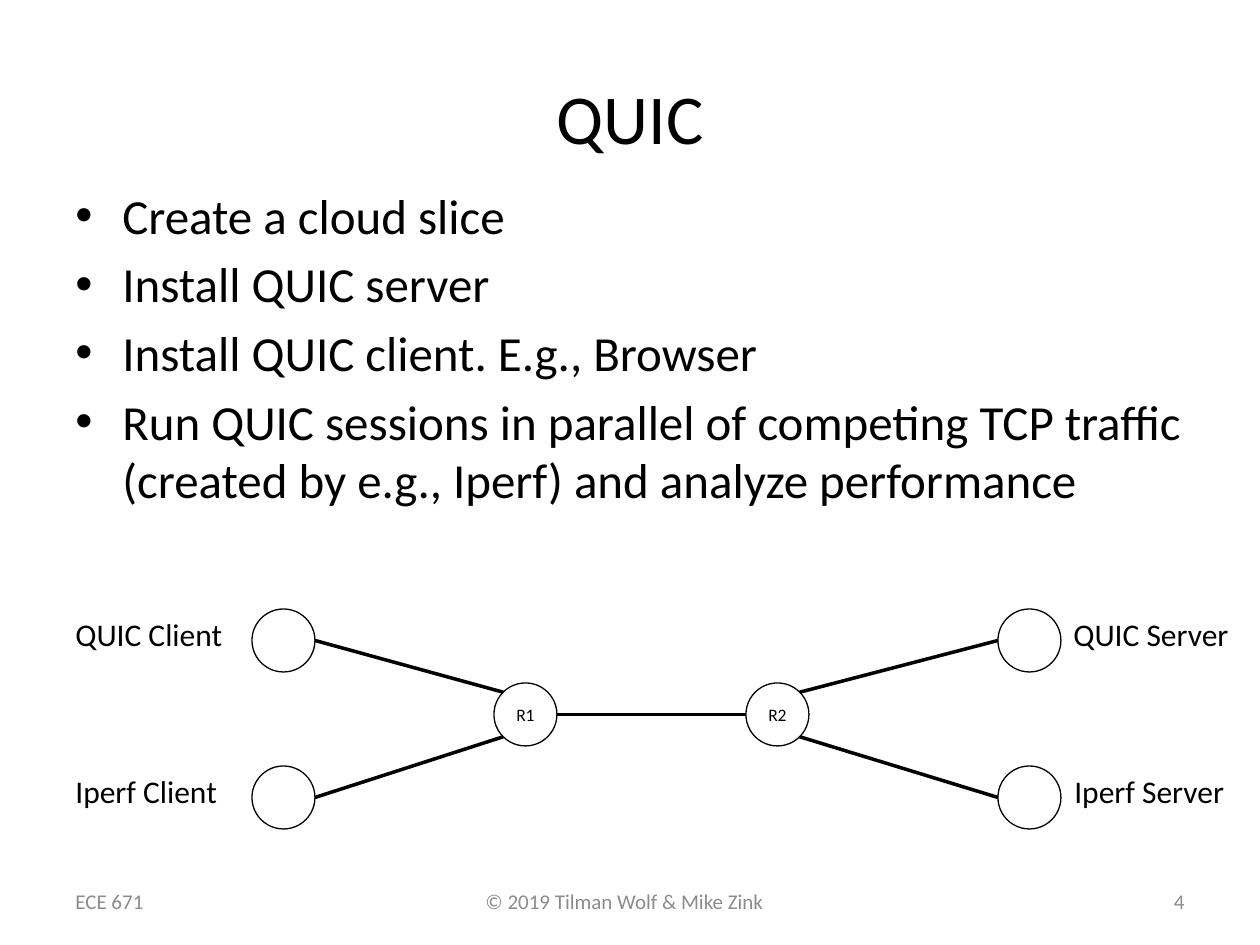
from math import sqrt

from lxml.etree import SubElement
from pptx import Presentation
from pptx.dml.color import RGBColor
from pptx.enum.shapes import MSO_CONNECTOR, MSO_SHAPE
from pptx.enum.text import MSO_ANCHOR, MSO_AUTO_SIZE, PP_ALIGN
from pptx.oxml.ns import qn
from pptx.util import Pt

SCALE = 914400 / 126
BLACK, WHITE, GRAY = "000000", "FFFFFF", "8C8C8C"
DIAMETER = 63


def px(length):
    return round(length * SCALE)


def color(value):
    return RGBColor.from_string(value)


def write(paragraph, text, size=18, fill=BLACK, align=PP_ALIGN.LEFT, font="Calibri"):
    paragraph.alignment = align
    span = paragraph.add_run()
    span.text = text
    span.font.name = font
    span.font.size = Pt(size)
    span.font.color.rgb = color(fill)


class Slide:
    def __init__(self, deck):
        self.page = deck.slides.add_slide(deck.slide_layouts[6])
        self.shapes = self.page.shapes

    def box(self, left, top, width, height, wrap=True, anchor=MSO_ANCHOR.TOP):
        frame = self.shapes.add_textbox(px(left), px(top), px(width), px(height)).text_frame
        frame.word_wrap = wrap
        frame.auto_size = MSO_AUTO_SIZE.NONE if wrap else MSO_AUTO_SIZE.SHAPE_TO_FIT_TEXT
        frame.vertical_anchor = anchor
        return frame

    def text(self, left, top, width, height, text, wrap=True,
             anchor=MSO_ANCHOR.MIDDLE, **style):
        frame = self.box(left, top, width, height, wrap, anchor)
        write(frame.paragraphs[0], text, **style)

    def label(self, left, top, width, text, **style):
        self.text(left, top, width, 50, text, wrap=False, anchor=MSO_ANCHOR.TOP, **style)

    def bullets(self, left, top, width, height, items, indent=47, size=28):
        frame = self.box(left, top, width, height)
        for number, item in enumerate(items):
            paragraph = frame.add_paragraph() if number else frame.paragraphs[0]
            write(paragraph, item, size=size)
            paragraph.space_before = Pt(size * 0.2)
            properties = paragraph._p.get_or_add_pPr()
            properties.set("marL", str(px(indent)))
            properties.set("indent", str(-px(indent)))
            SubElement(properties, qn("a:buFont"), typeface="Arial")
            SubElement(properties, qn("a:buChar"), char="•")

    def node(self, left, top, name=""):
        circle = self.shapes.add_shape(
            MSO_SHAPE.OVAL, px(left), px(top), px(DIAMETER), px(DIAMETER))
        circle.shadow.inherit = False
        circle.fill.solid()
        circle.fill.fore_color.rgb = color(WHITE)
        circle.line.color.rgb = color(BLACK)
        circle.line.width = Pt(0.75)
        if name:
            frame = circle.text_frame
            frame.word_wrap = False
            frame.vertical_anchor = MSO_ANCHOR.MIDDLE
            write(frame.paragraphs[0], name, size=10, align=PP_ALIGN.CENTER)

    def link(self, start, end):
        line = self.shapes.add_connector(
            MSO_CONNECTOR.STRAIGHT, *(px(value) for value in (*start, *end)))
        line.line.color.rgb = color(BLACK)
        line.line.width = Pt(2)
        SubElement(line._element.spPr, qn("a:effectLst"))


def draw_network(slide):
    client_left, server_left = 252, 998
    router_lefts, router_top = (494, 746), 683
    radius = DIAMETER / 2
    diagonal = radius / sqrt(2)
    router_middle = router_top + radius
    rows = [
        (609, -diagonal, ("QUIC Client", 174), ("QUIC Server", 1061, 183)),
        (766, diagonal, ("Iperf Client", 169), ("Iperf Server", 1062, 176)),
    ]

    for number, left in enumerate(router_lefts, 1):
        slide.node(left, router_top, f"R{number}")
    first, second = router_lefts
    slide.link((first + DIAMETER, router_middle), (second, router_middle))

    for top, offset, (client, client_width), (server, label_left, server_width) in rows:
        slide.node(client_left, top)
        slide.node(server_left, top)
        middle = top + radius
        joint = router_middle + offset
        slide.link((client_left + DIAMETER, middle), (first + radius - diagonal, joint))
        slide.link((second + radius + diagonal, joint), (server_left, middle))
        slide.label(63, top, client_width, client)
        slide.label(label_left, top, server_width, server)


def main():
    deck = Presentation()
    deck.slide_width, deck.slide_height = px(1260), px(945)
    slide = Slide(deck)
    footer = {"size": 12, "fill": GRAY}
    slide.label(473, 882, 307, "© 2019 Tilman Wolf & Mike Zink", **footer)
    slide.text(63, 38, 1134, 158, "QUIC", size=40, align=PP_ALIGN.CENTER)
    slide.bullets(63, 179, 1134, 368, [
        "Create a cloud slice",
        "Install QUIC server",
        "Install QUIC client. E.g., Browser",
        "Run QUIC sessions in parallel of competing TCP traffic "
        "(created by e.g., Iperf) and analyze performance",
    ])
    slide.text(63, 876, 294, 50, "ECE 671", **footer)
    slide.text(903, 876, 294, 50, "4", align=PP_ALIGN.RIGHT, **footer)
    draw_network(slide)
    deck.save("out.pptx")


if __name__ == "__main__":
    main()
